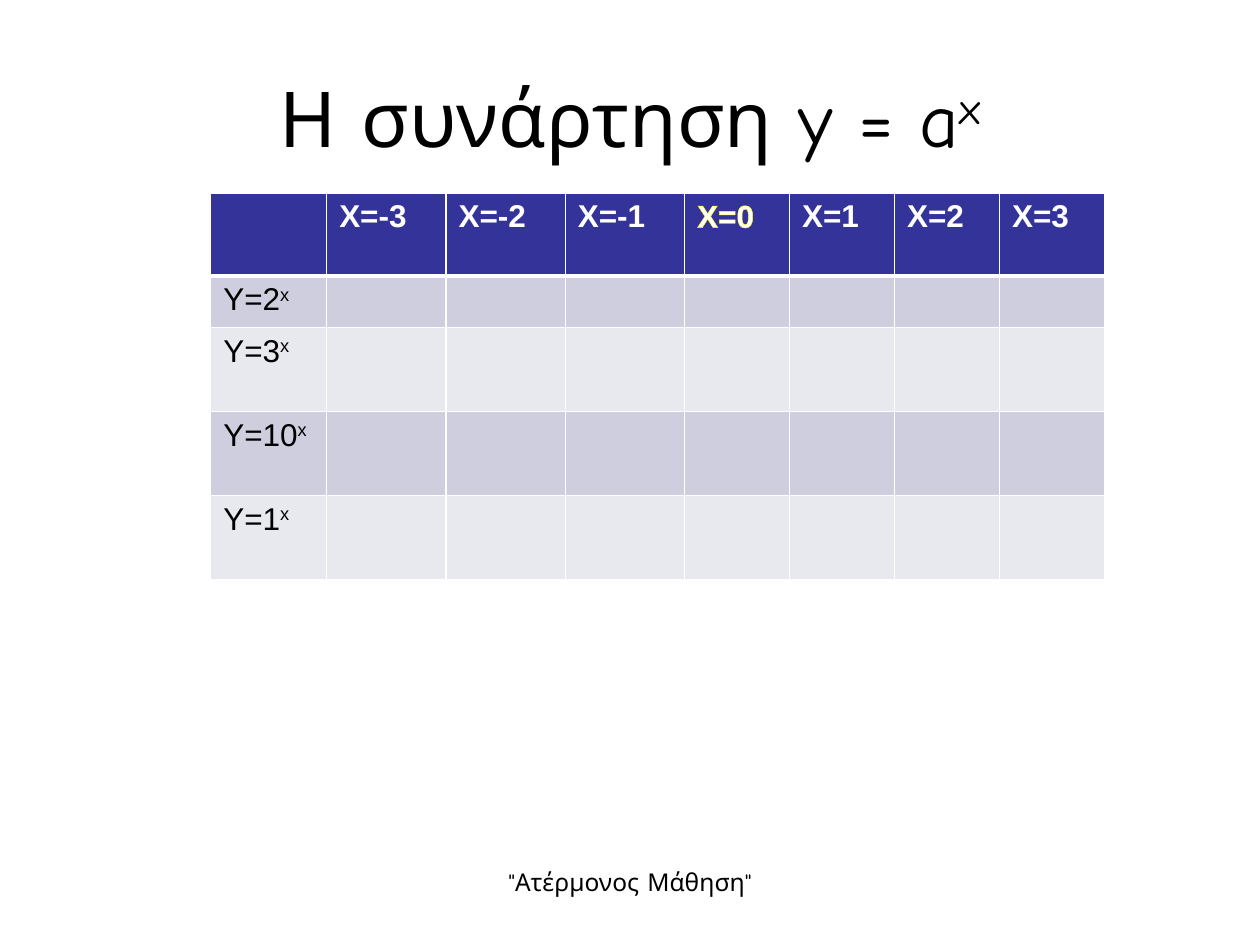
from lxml.etree import SubElement
from pptx import Presentation
from pptx.dml.color import RGBColor
from pptx.enum.text import MSO_ANCHOR, PP_ALIGN
from pptx.oxml.ns import qn
from pptx.util import Pt

# Content: each text is a base and an exponent
TITLE = ("Η συνάρτηση y = a", "x")
FOOT = ('"Ατέρμονος Μάθηση"', "")
HEADS = ["Χ=-3", "Χ=-2", "Χ=-1", "Χ=0", "Χ=1", "Χ=2", "Χ=3"]
BASES = ["Y=2", "Y=3", "Y=10", "Y=1"]
GRID = [[("", "")] + [(head, "") for head in HEADS]]
GRID += [[(base, "x")] + [("", "")] * len(HEADS) for base in BASES]

# Layout in points
WIDTHS = [66.3] + [68.2] * 3 + [60] * 4
HEIGHTS = [47.5, 29.5] + [48] * 3
LEFT, TOP = 120.4, 110.2

# Formats
BIG = {"name": "Comic Neue", "size": Pt(44), "color": "000000"}
SMALL = BIG | {"size": Pt(14)}
BODY = {"name": "Arial", "size": Pt(18), "bold": False, "color": "000000"}
HEAD = BODY | {"bold": True, "color": "FFFFFF"}
HEAD_FILL, BANDS, RULE, GLOW = "333399", ["CECEDE", "E8E8EF"], "FFFFFF", "FFFF00"


def paint(fill, tone):
    fill.solid()
    fill.fore_color.rgb = RGBColor.from_string(tone)


def write(para, parts, style):
    """Write the base and its raised exponent in one style."""
    for text, lift in zip(parts, (0, 30000)):
        if not text:
            continue
        run = para.add_run()
        run.text = text
        for key, val in style.items():
            if key == "color":
                paint(run.font.fill, val)
            else:
                setattr(run.font, key, val)
        if lift:
            run.font._element.set("baseline", str(lift))


def place(shape, *box):
    for key, val in zip(("left", "top", "width", "height"), box):
        setattr(shape, key, Pt(val))


def stroke(node, tag, tone, width):
    line = SubElement(node, qn(tag), w=str(Pt(width)))
    fill = SubElement(line, qn("a:solidFill"))
    SubElement(fill, qn("a:srgbClr"), val=tone)
    return line


def edge(cell, row):
    """Rule all four sides, with a thick line below the heads."""
    sides = {"L": 1, "R": 1, "T": 3 if row == 1 else 1, "B": 3 if row == 0 else 1}
    props = cell._tc.get_or_add_tcPr()
    for side, width in sides.items():
        stroke(props, "a:ln" + side, RULE, width)


deck = Presentation()
deck.slide_width, deck.slide_height = Pt(720), Pt(540)
slide = deck.slides.add_slide(deck.slide_layouts[5])

# Title
title = slide.shapes.title
place(title, 36, 21.6, 648, 90)
title.text_frame.vertical_anchor = MSO_ANCHOR.MIDDLE
para = title.text_frame.paragraphs[0]
para.alignment = PP_ALIGN.CENTER
write(para, TITLE, BIG)

# Table of values
frame = slide.shapes.add_table(len(GRID), len(WIDTHS), Pt(LEFT), Pt(TOP),
                               Pt(sum(WIDTHS)), Pt(sum(HEIGHTS)))
table = frame.table
for col, width in zip(table.columns, WIDTHS):
    col.width = Pt(width)
for row, height in zip(table.rows, HEIGHTS):
    row.height = Pt(height)
for i, line in enumerate(GRID):
    for j, parts in enumerate(line):
        cell = table.cell(i, j)
        edge(cell, i)
        paint(cell.fill, BANDS[(i - 1) % 2] if i else HEAD_FILL)
        write(cell.text_frame.paragraphs[0], parts, BODY if i else HEAD)

# Yellow outline on the zero column's head
zero = table.cell(0, HEADS.index("Χ=0") + 1).text_frame.paragraphs[0].runs[0]
props = zero.font._element
props.insert(0, stroke(props, "a:ln", GLOW, 0.75))

# Footer
foot = slide.shapes.add_textbox(Pt(246), Pt(492), Pt(228), Pt(37.5))
foot.text_frame.word_wrap = True
para = foot.text_frame.paragraphs[0]
para.alignment = PP_ALIGN.CENTER
write(para, FOOT, SMALL)

deck.save("out.pptx")
